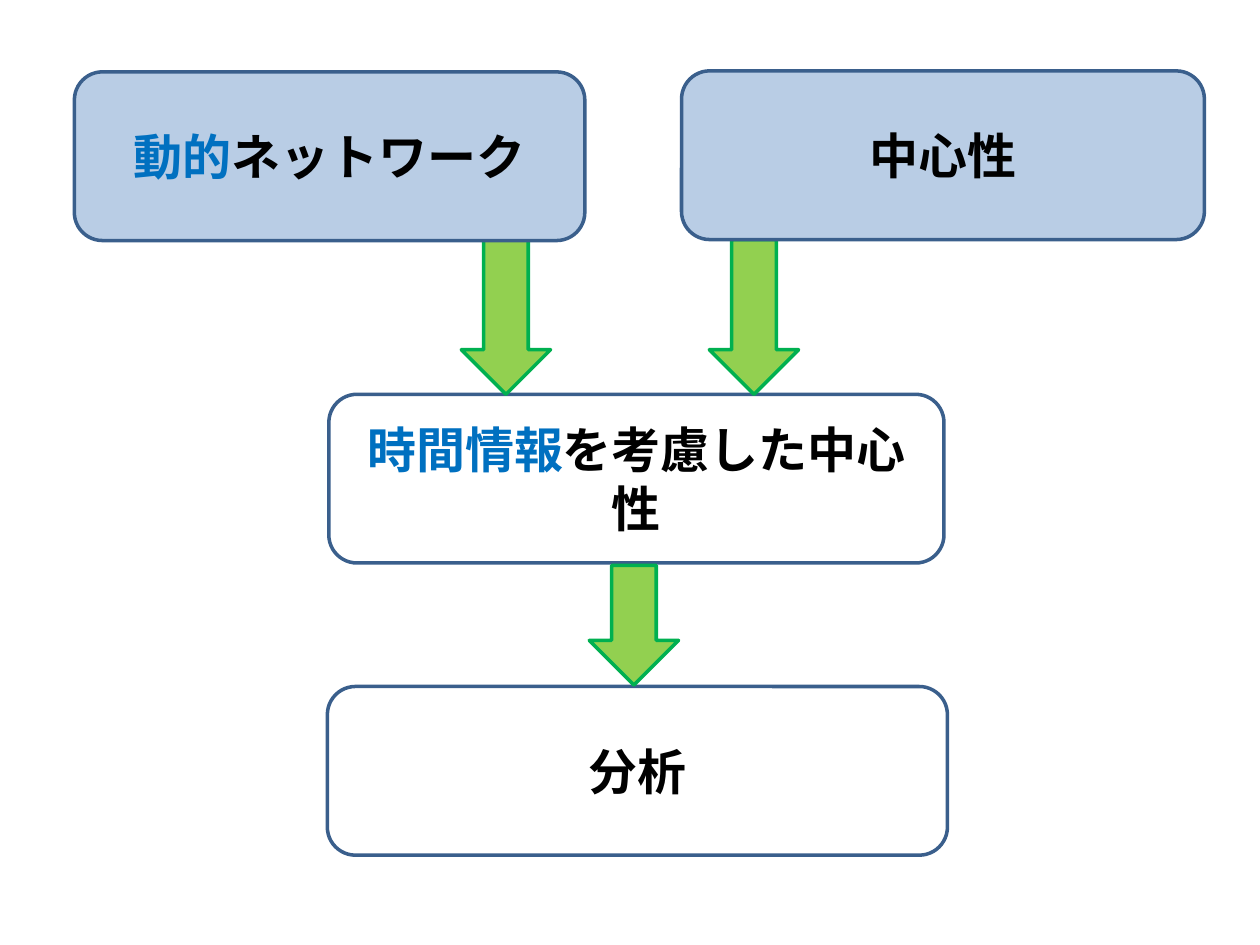
from pptx import Presentation
from pptx.dml.color import RGBColor
from pptx.enum.shapes import MSO_SHAPE as Shape
from pptx.enum.text import MSO_ANCHOR as Anchor, PP_ALIGN as Align
from pptx.util import Cm, Pt

COLORS = {
    "text": "000000",
    "accent": "0070C0",
    "box_line": "3A5F8C",
    "box_fill": "B9CDE5",
    "arrow_fill": "92D050",
    "arrow_line": "00B050",
}
BOX_HEIGHT = 3.4
ARROW_WIDTH = 1.8


class FlowSlide:
    """Holds the style and the slide being drawn."""

    font_name = "Calibri"
    font_size = Pt(28)
    line_width = Pt(2)

    def __init__(self, slide):
        self.slide = slide

    def color(self, name):
        return RGBColor.from_string(COLORS[name])

    def outline(self, kind, left, top, width, height, line, fill=None):
        shape = self.slide.shapes.add_shape(
            kind, Cm(left), Cm(top), Cm(width), Cm(height))
        shape.shadow.inherit = False
        shape.line.color.rgb = self.color(line)
        shape.line.width = self.line_width
        if fill:
            shape.fill.solid()
            shape.fill.fore_color.rgb = self.color(fill)
        else:
            shape.fill.background()
        return shape

    def box(self, left, top, width, runs, fill=None):
        shape = self.outline(Shape.ROUNDED_RECTANGLE, left, top, width,
                             BOX_HEIGHT, "box_line", fill)
        frame = shape.text_frame
        frame.word_wrap = True
        frame.vertical_anchor = Anchor.MIDDLE
        paragraph = frame.paragraphs[0]
        paragraph.alignment = Align.CENTER
        for text, color in runs:
            run = paragraph.add_run()
            run.text = text
            run.font.name = self.font_name
            run.font.size = self.font_size
            run.font.bold = True
            run.font.color.rgb = self.color(color)

    def arrow(self, left, top, height):
        self.outline(Shape.DOWN_ARROW, left, top, ARROW_WIDTH, height,
                     "arrow_line", "arrow_fill")


def main():
    presentation = Presentation()
    presentation.slide_width = Cm(25.4)
    presentation.slide_height = Cm(19.05)
    flow = FlowSlide(presentation.slides.add_slide(presentation.slide_layouts[6]))

    # Result boxes
    flow.box(6.63, 7.95, 12.4,
             [("時間情報", "accent"), ("を考慮した中心性", "text")])
    flow.box(6.6, 13.84, 12.5, [("分析", "text")])

    # Arrows: two into the middle box, one out of it
    for left in (9.3, 14.3):
        flow.arrow(left, 4.83, 3.12)
    flow.arrow(11.88, 11.4, 2.41)

    # Starting concepts, drawn over the arrow tails
    flow.box(1.5, 1.45, 10.29,
             [("動的", "accent"), ("ネットワーク", "text")], "box_fill")
    flow.box(13.74, 1.43, 10.54, [("中心性", "text")], "box_fill")

    presentation.save("out.pptx")


if __name__ == "__main__":
    main()
